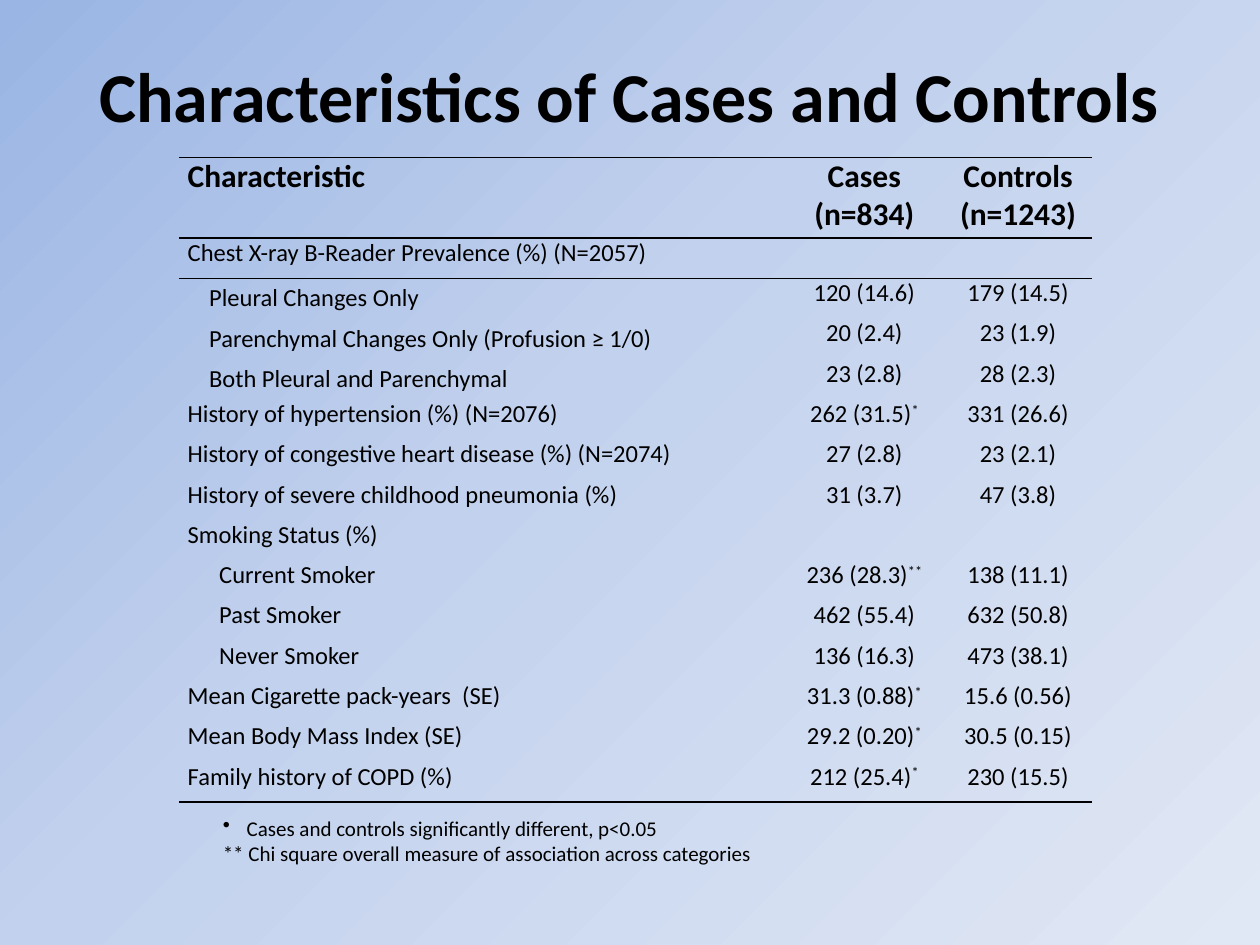
from dataclasses import dataclass

from lxml import etree
from pptx import Presentation
from pptx.dml.color import RGBColor
from pptx.enum.text import MSO_ANCHOR, PP_ALIGN
from pptx.oxml.ns import qn
from pptx.util import Inches, Pt

CENTER, LEFT = PP_ALIGN.CENTER, PP_ALIGN.LEFT
TOP, MIDDLE = MSO_ANCHOR.TOP, MSO_ANCHOR.MIDDLE
NO_STYLE = "{2D5ABB26-0587-4C30-8999-92F81FD0307C}"


@dataclass(frozen=True)
class Theme:
    font: str = "Calibri"
    ink: str = "000000"
    title_size: int = 40
    header_size: int = 18
    body_size: int = 14
    note_size: int = 12
    rule_width: int = 1
    # Stops: position in percent, colour, opacity in percent
    backdrop: tuple = ((0, "9AB5E4", 100), (44, "C2D1ED", 46), (100, "E1E8F5", 100))


@dataclass(frozen=True)
class Indent:
    margin: float = 0
    first: float = 0


@dataclass(frozen=True)
class Row:
    label: str
    cases: str = ""
    controls: str = ""
    mark: str = ""
    indent: Indent = Indent()
    anchor: MSO_ANCHOR = TOP


THEME = Theme()
XRAY = {"indent": Indent(first=0.17), "anchor": MIDDLE}
SMOKER = {"indent": Indent(margin=0.25)}
UNIT = 0.32  # height of a body row; the header takes two
COLUMNS = (4.55, 0.26, 1.26, 1.18)

HEADER = Row("Characteristic", "Cases\n(n=834)", "Controls\n(n=1243)")
ROWS = (
    Row("Chest X-ray B-Reader Prevalence (%) (N=2057)"),
    Row("Pleural Changes Only", "120 (14.6)", "179 (14.5)", **XRAY),
    Row("Parenchymal Changes Only (Profusion ≥ 1/0)", "20 (2.4)", "23 (1.9)", **XRAY),
    Row("Both Pleural and Parenchymal", "23 (2.8)", "28 (2.3)", **XRAY),
    Row("History of hypertension (%) (N=2076)", "262 (31.5)", "331 (26.6)", "*"),
    Row("History of congestive heart disease (%) (N=2074)", "27 (2.8)", "23 (2.1)"),
    Row("History of severe childhood pneumonia (%)", "31 (3.7)", "47 (3.8)"),
    Row("Smoking Status (%)"),
    Row("Current Smoker", "236 (28.3)", "138 (11.1)", "**", **SMOKER),
    Row("Past Smoker", "462 (55.4)", "632 (50.8)", **SMOKER),
    Row("Never Smoker", "136 (16.3)", "473 (38.1)", **SMOKER),
    Row("Mean Cigarette pack-years  (SE)", "31.3 (0.88)", "15.6 (0.56)", "*"),
    Row("Mean Body Mass Index (SE)", "29.2 (0.20)", "30.5 (0.15)", "*"),
    Row("Family history of COPD (%)", "212 (25.4)", "230 (15.5)", "*"),
)
NOTES = (
    "Cases and controls significantly different, p<0.05",
    "** Chi square overall measure of association across categories",
)


def apply(target, values: dict) -> None:
    for name, value in values.items():
        setattr(target, name, value)


def add_span(para, text: str, size: int, bold: bool = False, raised: bool = False) -> None:
    span = para.add_run()
    span.text = text
    apply(span.font, {"name": THEME.font, "size": Pt(size), "bold": bold})
    span.font.color.rgb = RGBColor.from_string(THEME.ink)
    if raised:
        span._r.get_or_add_rPr().set("baseline", "30000")


def set_indent(para, indent: Indent) -> None:
    properties = para._p.get_or_add_pPr()
    properties.set("marL", str(Inches(indent.margin)))
    properties.set("indent", str(Inches(indent.first)))


def add_stop(stops, position: int, colour: str, opacity: int) -> None:
    stop = etree.SubElement(stops, qn("a:gs"), pos=str(position * 1000))
    tint = etree.SubElement(stop, qn("a:srgbClr"), val=colour)
    if opacity < 100:
        etree.SubElement(tint, qn("a:alpha"), val=str(opacity * 1000))


def paint_background(page) -> None:
    fill = page.background.fill
    fill.gradient()
    fill.gradient_angle = 315  # counter-clockwise, so towards the lower right
    stops = page.background._cSld.find(".//" + qn("a:gsLst"))
    for stop in list(stops):
        stops.remove(stop)
    for stop in THEME.backdrop:
        add_stop(stops, *stop)


def add_rule(cell, side: str) -> None:
    line = etree.SubElement(cell._tc.get_or_add_tcPr(), qn(f"a:{side}"),
                            w=str(Pt(THEME.rule_width)))
    solid = etree.SubElement(line, qn("a:solidFill"))
    etree.SubElement(solid, qn("a:srgbClr"), val=THEME.ink)


def fill_cell(cell, text: str, align: PP_ALIGN, anchor: MSO_ANCHOR, indent: Indent,
              mark: str, header: bool, rules: tuple) -> None:
    apply(cell, {"margin_left": Inches(0.07), "margin_right": Inches(0.07),
                 "margin_top": 0, "margin_bottom": 0, "vertical_anchor": anchor})
    for side in rules:
        add_rule(cell, side)
    cell.fill.background()
    if not text:
        return
    size = THEME.header_size if header else THEME.body_size
    for number, line in enumerate(text.split("\n")):
        frame = cell.text_frame
        para = frame.add_paragraph() if number else frame.paragraphs[0]
        para.alignment = align
        set_indent(para, indent)
        add_span(para, line, size, bold=header)
    if mark:
        add_span(para, mark, size, raised=True)


def add_characteristics(page) -> None:
    rows = (HEADER, *ROWS)
    heights = [2 * UNIT] + [UNIT] * len(ROWS)
    frame = page.shapes.add_table(len(rows), len(COLUMNS), Inches(1.42), Inches(1.25),
                                  Inches(sum(COLUMNS)), Inches(sum(heights)))
    table = frame.table
    apply(table, {"first_row": False, "horz_banding": False})
    table._tbl.tblPr.find(qn("a:tableStyleId")).text = NO_STYLE
    for column, width in zip(table.columns, COLUMNS):
        column.width = Inches(width)
    rules = {0: ("lnT", "lnB"), 1: ("lnT",), len(ROWS): ("lnB",)}
    for index, (row, height) in enumerate(zip(rows, heights)):
        table.rows[index].height = Inches(height)
        cells = (
            (row.label, LEFT, row.anchor, row.indent, ""),
            ("", LEFT, TOP, Indent(), ""),
            (row.cases, CENTER, TOP, Indent(), row.mark),
            (row.controls, CENTER, TOP, Indent(), ""),
        )
        for column, content in enumerate(cells):
            fill_cell(table.cell(index, column), *content,
                      header=row is HEADER, rules=rules.get(index, ()))


def add_notes(page) -> None:
    box = page.shapes.add_textbox(Inches(1.67), Inches(6.42), Inches(5.17), Inches(0.51))
    frame = box.text_frame
    frame.word_wrap = True
    bulleted = frame.paragraphs[0]
    set_indent(bulleted, Indent(0.19, -0.19))
    etree.SubElement(bulleted._p.get_or_add_pPr(), qn("a:buChar"), char="•")
    for para, text in zip((bulleted, frame.add_paragraph()), NOTES):
        add_span(para, text, THEME.note_size)


def add_title(page) -> None:
    title = page.shapes.title
    apply(title, {"left": Inches(0.49), "top": Inches(0.25),
                  "width": Inches(9), "height": Inches(1)})
    title.text_frame.vertical_anchor = MIDDLE
    para = title.text_frame.paragraphs[0]
    para.alignment = CENTER
    add_span(para, "Characteristics of Cases and Controls", THEME.title_size, bold=True)


def main() -> None:
    deck = Presentation()
    apply(deck, {"slide_width": Inches(10), "slide_height": Inches(7.5)})
    page = deck.slides.add_slide(deck.slide_layouts[5])  # title only
    paint_background(page)
    add_characteristics(page)
    add_notes(page)
    add_title(page)
    deck.save("out.pptx")


if __name__ == "__main__":
    main()
